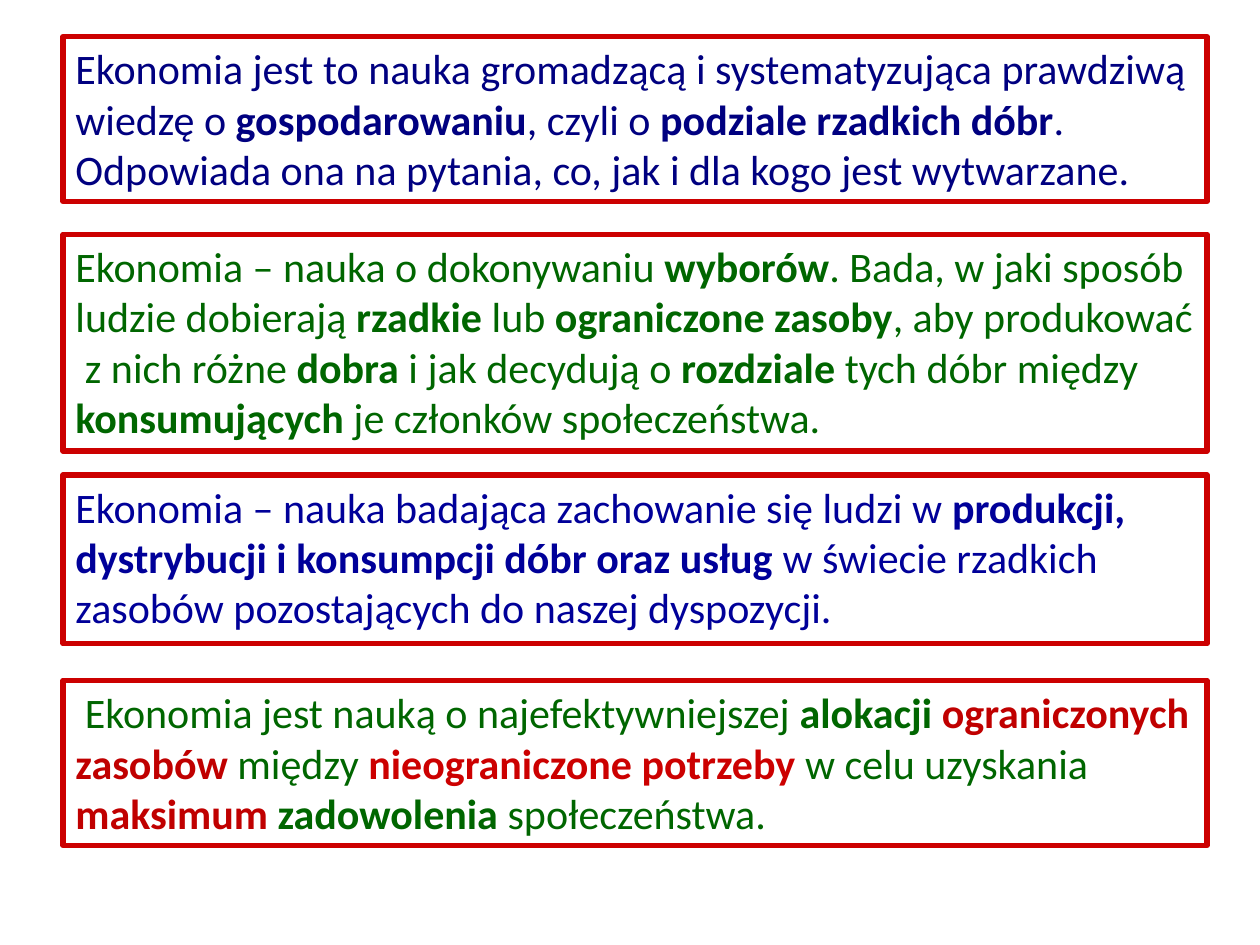
from dataclasses import dataclass

from pptx import Presentation
from pptx.dml.color import RGBColor
from pptx.enum.text import MSO_ANCHOR, MSO_AUTO_SIZE
from pptx.slide import Slide
from pptx.util import Pt

NAVY = "000080"
BLUE = "000099"
GREEN = "006600"
RED = "CC0000"
DARK_RED = "C00000"

BOX_LEFT = 36
BOX_WIDTH = 653.8


@dataclass(frozen=True)
class Span:
    text: str
    color: str
    bold: bool = False


@dataclass(frozen=True)
class Definition:
    top: float
    height: float
    spans: list[Span]


def hex_color(value: str) -> RGBColor:
    return RGBColor.from_string(value)


def alternate(color: str, *texts: str) -> list[Span]:
    return [Span(text, color, index % 2 == 1) for index, text in enumerate(texts)]


def draw_definition(page: Slide, definition: Definition) -> None:
    box = page.shapes.add_textbox(
        Pt(BOX_LEFT), Pt(definition.top), Pt(BOX_WIDTH), Pt(definition.height)
    )
    box.line.color.rgb = hex_color(RED)
    box.line.width = Pt(3)
    frame = box.text_frame
    frame.word_wrap = True
    frame.auto_size = MSO_AUTO_SIZE.SHAPE_TO_FIT_TEXT
    frame.vertical_anchor = MSO_ANCHOR.TOP
    para = frame.paragraphs[0]
    for span in definition.spans:
        run = para.add_run()
        run.text = span.text
        run.font.name = "Calibri"
        run.font.size = Pt(24)
        run.font.bold = span.bold
        run.font.color.rgb = hex_color(span.color)


DEFINITIONS = [
    Definition(20.9, 94.3, alternate(
        NAVY,
        "Ekonomia jest to nauka gromadzącą i systematyzująca prawdziwą wiedzę o ",
        "gospodarowaniu",
        ", czyli o ",
        "podziale rzadkich dóbr",
        ". Odpowiada ona na pytania, co, jak i dla kogo jest wytwarzane.",
    )),
    Definition(133.9, 123.8, alternate(
        GREEN,
        "Ekonomia – nauka o dokonywaniu ",
        "wyborów",
        ". Bada, w jaki sposób ludzie dobierają ",
        "rzadkie",
        " lub ",
        "ograniczone zasoby",
        ", aby produkować  z nich różne ",
        "dobra",
        " i jak decydują o ",
        "rozdziale",
        " tych dóbr między ",
        "konsumujących",
        " je członków społeczeństwa.",
    )),
    Definition(271.4, 96.5, alternate(
        BLUE,
        "Ekonomia – nauka badająca zachowanie się ludzi w ",
        "produkcji, dystrybucji i konsumpcji dóbr oraz usług",
        " w świecie rzadkich zasobów pozostających do naszej dyspozycji.",
    )),
    Definition(388.8, 94.3, [
        Span(" ", NAVY),
        Span("Ekonomia jest nauką o najefektywniejszej ", GREEN),
        Span("alokacji ", GREEN, True),
        Span("ograniczonych zasobów ", DARK_RED, True),
        Span("między ", GREEN),
        Span("nieograniczone potrzeby", RED, True),
        Span(" w celu uzyskania ", GREEN),
        Span("maksimum", DARK_RED, True),
        Span(" zadowolenia ", GREEN, True),
        Span("społeczeństwa.", GREEN),
    ]),
]


def main() -> None:
    deck = Presentation()
    deck.slide_width = Pt(720)
    deck.slide_height = Pt(540)
    page = deck.slides.add_slide(deck.slide_layouts[6])
    for definition in DEFINITIONS:
        draw_definition(page, definition)
    deck.save("out.pptx")


if __name__ == "__main__":
    main()
